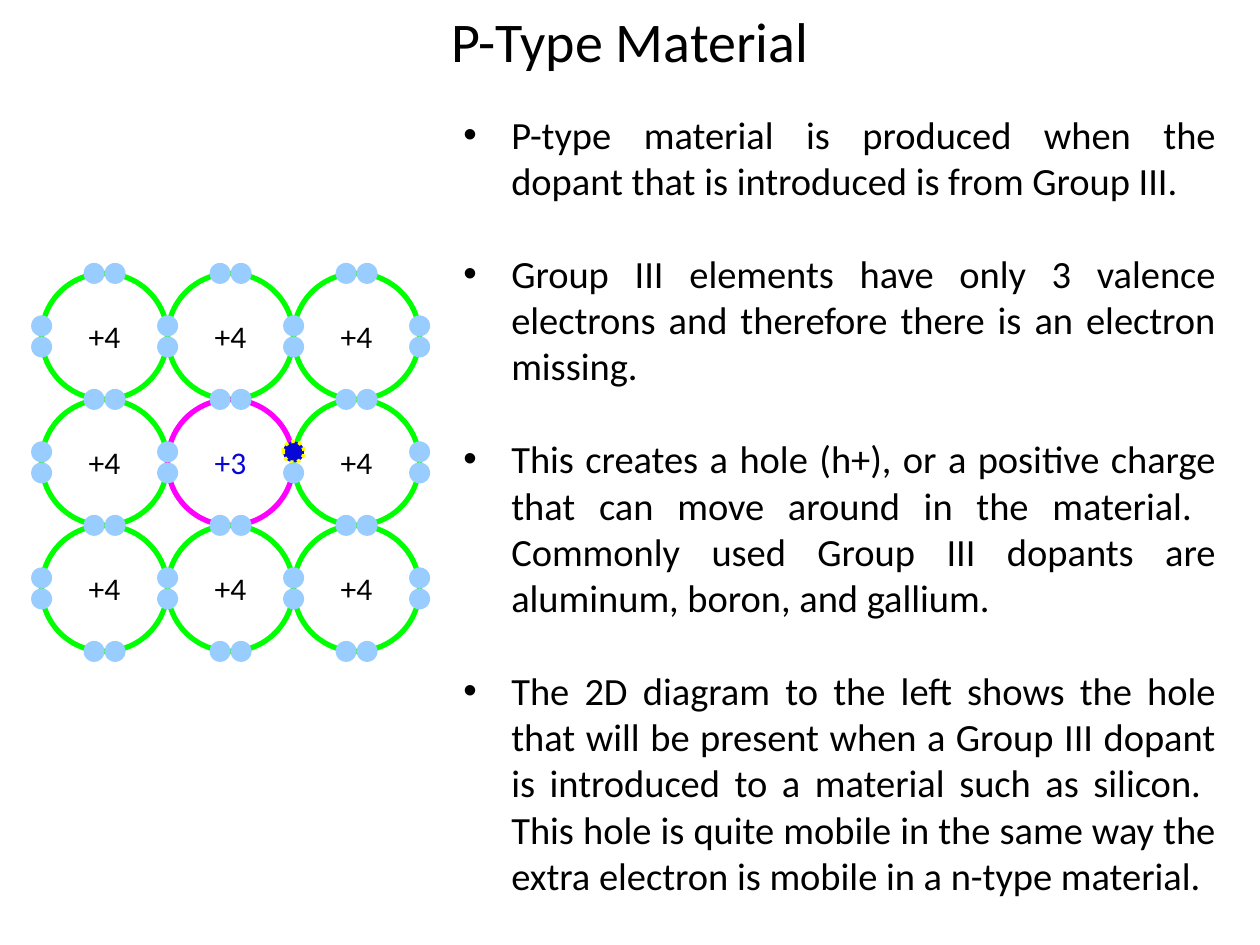
import pptx
import pptx.util
import pptx.dml.color
import pptx.enum.dml
import pptx.enum.shapes
import pptx.enum.text
import pptx.oxml.ns
from lxml import etree

Inches = pptx.util.Inches
Pt = pptx.util.Pt
RGBColor = pptx.dml.color.RGBColor
Align = pptx.enum.text.PP_ALIGN

BLACK = RGBColor(0x00, 0x00, 0x00)
GREEN = RGBColor(0x00, 0xFF, 0x00)
PINK = RGBColor(0xFF, 0x00, 0xFF)
NAVY = RGBColor(0x08, 0x08, 0xD6)
SKY = RGBColor(0x99, 0xCC, 0xFF)
YELLOW = RGBColor(0xFF, 0xFF, 0x00)
FONT = "Calibri"

TITLE = "P-Type Material"
POINTS = [
    "P-type material is produced when the dopant that is introduced is from Group III.",
    "Group III elements have only 3 valence electrons and therefore there is an electron missing.",
    "This creates a hole (h+), or a positive charge that can move around in the material.  "
    "Commonly used Group III dopants are aluminum, boron, and gallium.",
    "The 2D diagram to the left shows the hole that will be present when a Group III dopant "
    "is introduced to a material such as silicon.  This hole is quite mobile in the same way "
    "the extra electron is mobile in a n-type material.",
]
ATOMS = [
    ["+4", "+4", "+4"],
    ["+4", "+3", "+4"],
    ["+4", "+4", "+4"],
]
HOLE = (2, 1)

LEFT, TOP = 0.33, 2.17
SIZE = 1
DOT = 1 / 6
COUNT = len(ATOMS)


def style(para, size, color, align):
    para.alignment = align
    for run in para.runs:
        run.font.name = FONT
        run.font.size = Pt(size)
        run.font.color.rgb = color


def add_box(slide, left, top, width, height):
    box = slide.shapes.add_textbox(Inches(left), Inches(top), Inches(width), Inches(height))
    box.text_frame.word_wrap = True
    return box.text_frame


def add_bullet(para):
    props = para._p.get_or_add_pPr()
    props.set("marL", str(Inches(0.38)))
    props.set("indent", str(-Inches(0.38)))
    font = etree.SubElement(props, pptx.oxml.ns.qn("a:buFont"))
    font.set("typeface", "Arial")
    mark = etree.SubElement(props, pptx.oxml.ns.qn("a:buChar"))
    mark.set("char", "•")


def add_round(slide, left, top, size):
    kind = pptx.enum.shapes.MSO_SHAPE.OVAL
    shape = slide.shapes.add_shape(kind, Inches(left), Inches(top), Inches(size), Inches(size))
    shape.shadow.inherit = False
    return shape


def add_atom(slide, col, row, label):
    host = label == "+4"
    atom = add_round(slide, LEFT + col * SIZE, TOP + row * SIZE, SIZE)
    atom.fill.background()
    atom.line.color.rgb = GREEN if host else PINK
    atom.line.width = Pt(3)
    frame = atom.text_frame
    frame.margin_left = frame.margin_right = frame.margin_top = frame.margin_bottom = 0
    frame.vertical_anchor = pptx.enum.text.MSO_ANCHOR.MIDDLE
    frame.text = label
    style(frame.paragraphs[0], 18, BLACK if host else NAVY, Align.CENTER)


def add_dot(slide, x, y, hole=False):
    dot = add_round(slide, x - DOT / 2, y - DOT / 2, DOT)
    dot.fill.solid()
    dot.fill.fore_color.rgb = NAVY if hole else SKY
    if hole:
        dot.line.color.rgb = YELLOW
        dot.line.width = Pt(2)
        dot.line.dash_style = pptx.enum.dml.MSO_LINE.ROUND_DOT
    else:
        dot.line.fill.background()


def add_grid(slide):
    for row, labels in enumerate(ATOMS):
        for col, label in enumerate(labels):
            add_atom(slide, col, row, label)
    for edge in range(COUNT + 1):
        for cell in range(COUNT):
            line = edge * SIZE
            mid = (cell + 0.5) * SIZE
            for side in (-1, 1):
                step = mid + side * DOT / 2
                add_dot(slide, LEFT + step, TOP + line)
                hole = (edge, cell) == HOLE and side < 0
                add_dot(slide, LEFT + line, TOP + step, hole)


def main():
    deck = pptx.Presentation()
    deck.slide_width = Inches(10)
    deck.slide_height = Inches(7.5)
    slide = deck.slides.add_slide(deck.slide_layouts[6])

    title = add_box(slide, 1, 0, 8, 0.63)
    title.text = TITLE
    style(title.paragraphs[0], 32, BLACK, Align.CENTER)

    body = add_box(slide, 3.58, 0.83, 6.17, 6.4)
    for index, point in enumerate(POINTS):
        para = body.add_paragraph() if index else body.paragraphs[0]
        para.text = point
        style(para, 22, BLACK, Align.JUSTIFY)
        para.space_before = Pt(26.8 if index else 0)
        add_bullet(para)

    add_grid(slide)
    deck.save("out.pptx")


if __name__ == "__main__":
    main()
